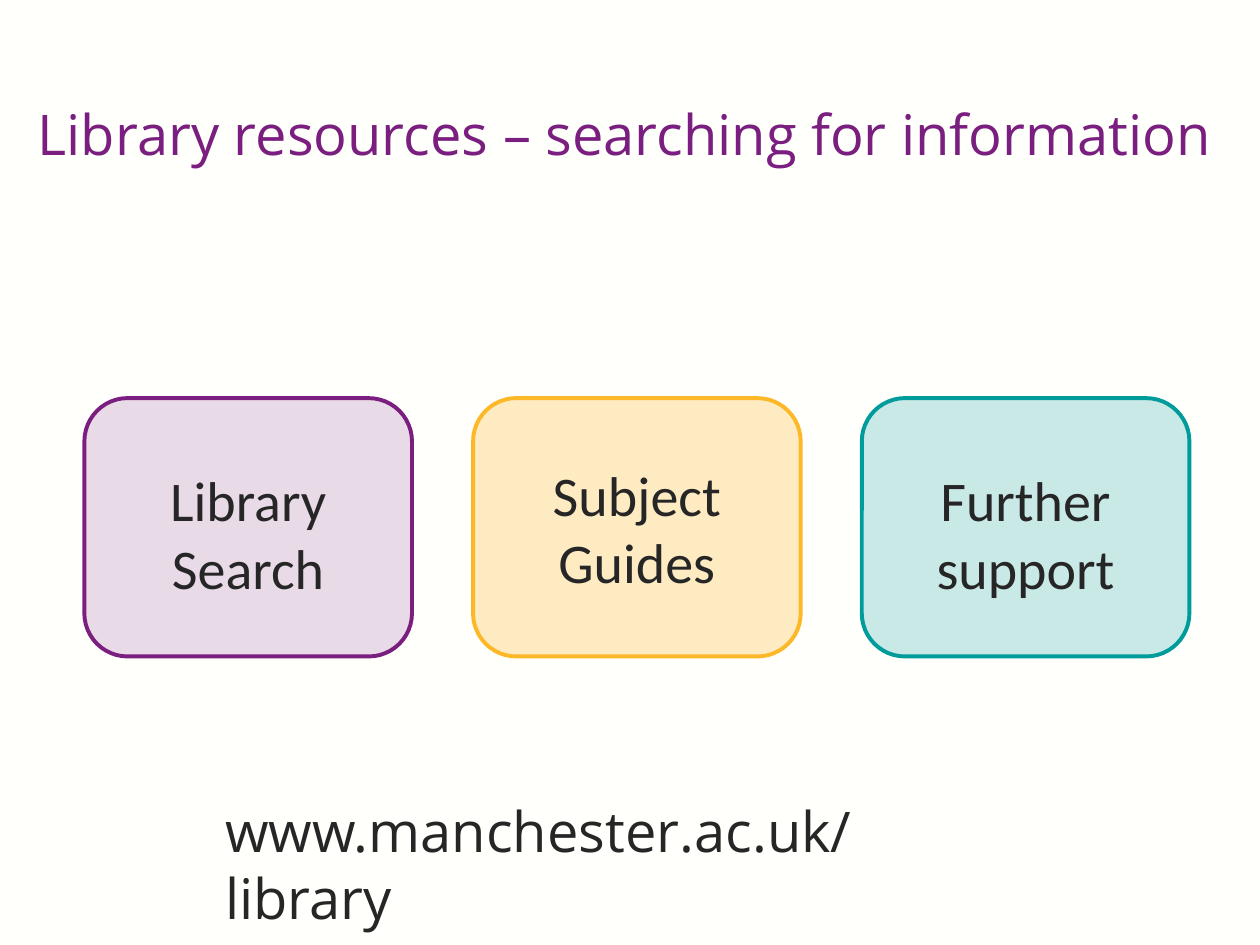
from lxml import etree
from pptx import Presentation
from pptx import util as u
from pptx.dml.color import RGBColor
from pptx.enum import shapes, text
from pptx.oxml.ns import qn

COLORS = {
    "background": "FFFFFC",
    "text": "262626",
    "purple": "7A1F7F",
    "yellow": "FDB828",
    "teal": "009B9B",
}
TITLE_ONLY = 5


def write_text(frame, content, font="Open Sans", size=32, color="text",
               align=text.PP_ALIGN.LEFT, anchor=text.MSO_ANCHOR.TOP,
               spacing=None, insets=(0.1, 0.05, 0.1, 0.05)):
    """Fill a text frame with one formatted paragraph."""
    frame.auto_size = text.MSO_AUTO_SIZE.NONE
    frame.word_wrap = True
    frame.vertical_anchor = anchor
    (frame.margin_left, frame.margin_top,
     frame.margin_right, frame.margin_bottom) = map(u.Inches, insets)
    paragraph = frame.paragraphs[0]
    paragraph.alignment = align
    paragraph.line_spacing = spacing
    run = paragraph.add_run()
    run.text = content
    run.font.name = font
    run.font.size = u.Pt(size)
    run.font.color.rgb = RGBColor.from_string(COLORS[color])


class SlideBuilder:
    """Holds the card grid and the current slide."""
    left, top = 0.67, 3.16
    card_width, card_height = 2.6, 2.05
    column_step = 3.085

    def __init__(self, presentation):
        self.slide = presentation.slides.add_slide(
            presentation.slide_layouts[TITLE_ONLY])
        fill = self.slide.background.fill
        fill.solid()
        fill.fore_color.rgb = RGBColor.from_string(COLORS["background"])

    def title(self, content):
        title = self.slide.shapes.title
        title.left, title.top = u.Inches(0.2), u.Inches(0.21)
        title.width, title.height = u.Inches(9.61), u.Inches(1.1)
        write_text(title.text_frame, content, color="purple", spacing=1.5,
                   insets=(0.1, 0.31, 0.1, 0.05))

    def card(self, column, label, color, opacity, top_inset):
        card = self.slide.shapes.add_shape(
            shapes.MSO_SHAPE.ROUNDED_RECTANGLE,
            u.Inches(self.left + column * self.column_step),
            u.Inches(self.top),
            u.Inches(self.card_width), u.Inches(self.card_height))
        card.shadow.inherit = False
        card.adjustments[0] = 0.167
        tone = RGBColor.from_string(COLORS[color])
        card.fill.solid()
        card.fill.fore_color.rgb = tone
        card.line.color.rgb = tone
        card.line.width = u.Pt(2.25)
        # Translucent fill
        fill_color = card.fill._xPr.find(qn("a:solidFill"))[0]
        etree.SubElement(fill_color, qn("a:alpha"), val=str(opacity * 1000))
        write_text(card.text_frame, label, font="Calibri",
                   align=text.PP_ALIGN.CENTER,
                   anchor=text.MSO_ANCHOR.MIDDLE,
                   insets=(0.05, top_inset, 0.05, 0.05))

    def address(self, content):
        box = self.slide.shapes.add_textbox(
            u.Inches(1.69), u.Inches(6.27), u.Inches(5.78), u.Inches(0.64))
        write_text(box.text_frame, content)


def main():
    presentation = Presentation()
    presentation.slide_width = u.Inches(10)
    presentation.slide_height = u.Inches(7.5)
    builder = SlideBuilder(presentation)

    # Heading
    builder.title("Library resources – searching for information")

    # Three topic cards: label, colour, opacity in percent, top inset
    cards = [
        ("Library Search", "purple", 16, 0.14),
        ("Subject Guides", "yellow", 27, 0.05),
        ("Further support", "teal", 21, 0.14),
    ]
    for column, card in enumerate(cards):
        builder.card(column, *card)

    # Web address
    builder.address("www.manchester.ac.uk/library")

    presentation.save("out.pptx")


if __name__ == "__main__":
    main()
